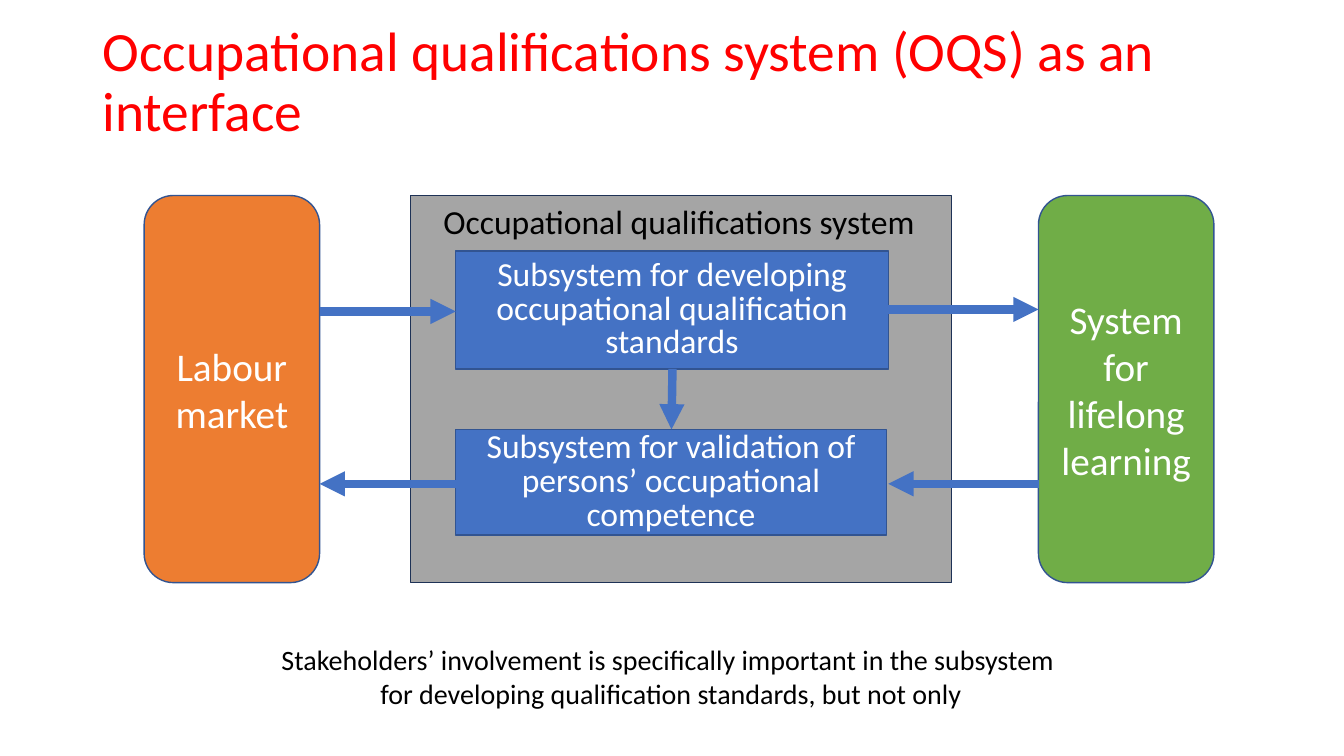
from lxml import etree
from pptx import Presentation
from pptx import util as u
from pptx.dml.color import RGBColor
from pptx.enum import shapes, text
from pptx.oxml import ns

# Content: lengths in px, 100 px to the inch
PX = 9144
FONT = "Calibri"
COLORS = {
    "red": "FF0000", "black": "000000", "white": "FFFFFF", "grey": "A5A5A5",
    "blue": "4472C4", "orange": "ED7D31", "green": "70AD47",
    "navy": "1E3256", "edge": "325491",
}
TOP, HEIGHT, SIDE_WIDTH = 194, 384, 174
LABOUR_LEFT, LEARNING_LEFT = 143, 1030
LABOUR_RIGHT = LABOUR_LEFT + SIDE_WIDTH
SUB_LEFT, SUB_RIGHT = 452, 881
UPPER_TOP, UPPER_BOTTOM, LOWER_TOP = 249, 366, 426
RETURN_Y = 480

# kind, (left, top, width, height), fill, edge, lines, size, line spacing
BOXES = [
    ("RECTANGLE", (407, TOP, 537, HEIGHT), "grey", "navy", [], 24, None),
    ("RECTANGLE", (SUB_LEFT, UPPER_TOP, SUB_RIGHT - SUB_LEFT, UPPER_BOTTOM - UPPER_TOP),
     "blue", "edge",
     ["Subsystem for developing occupational qualification standards"], 24, u.Pt(24)),
    ("RECTANGLE", (SUB_LEFT, LOWER_TOP, 427, 105), "blue", "edge",
     ["Subsystem for validation of persons’ occupational competence"], 24, u.Pt(24)),
    ("ROUNDED_RECTANGLE", (LABOUR_LEFT, TOP, SIDE_WIDTH, HEIGHT), "orange", "edge",
     ["Labour", "market"], 28, None),
    ("ROUNDED_RECTANGLE", (LEARNING_LEFT, TOP, SIDE_WIDTH, HEIGHT), "green", "edge",
     ["System", "for", "lifelong", "learning"], 28, None),
]

# Each arrow points at its second end
ARROWS = [
    ((LABOUR_RIGHT, 309), (SUB_LEFT, 309)),
    ((SUB_RIGHT, 307), (LEARNING_LEFT, 307)),
    ((SUB_LEFT, RETURN_Y), (LABOUR_RIGHT, RETURN_Y)),
    ((LEARNING_LEFT, RETURN_Y), (SUB_RIGHT, RETURN_Y)),
    ((667, UPPER_BOTTOM), (666, LOWER_TOP)),
]

# (left, top, width, height), lines, size, color, align, anchor, wrap, line spacing
LABELS = [
    ((92, 40, 1156, 85), ["Occupational qualifications system (OQS) as an interface"],
     39.6, "red", "LEFT", "MIDDLE", True, 0.9),
    ((430, TOP, 492, 50), ["Occupational qualifications system"],
     24, "black", "LEFT", "TOP", False, None),
    ((265, 633, 801, 77),
     ["Stakeholders’ involvement is specifically important in the subsystem ",
      "for developing qualification standards, but not only"],
     20, "black", "CENTER", "TOP", False, None),
]


def px(values):
    return [u.Emu(value * PX) for value in values]


def color(name):
    return RGBColor.from_string(COLORS[name])


def write(shape, lines, size, ink, align="CENTER", anchor="MIDDLE", wrap=True, spacing=None):
    frame = shape.text_frame
    frame.word_wrap = wrap
    frame.vertical_anchor = text.MSO_ANCHOR[anchor]
    for index, line in enumerate(lines):
        para = frame.add_paragraph() if index else frame.paragraphs[0]
        para.alignment = text.PP_ALIGN[align]
        para.line_spacing = spacing
        span = para.add_run()
        span.text = line
        span.font.name = FONT
        span.font.size = u.Pt(size)
        span.font.color.rgb = color(ink)


def add_box(page, kind, place, fill, edge, lines, size, spacing):
    box = page.shapes.add_shape(shapes.MSO_SHAPE[kind], *px(place))
    box.shadow.inherit = False
    box.fill.solid()
    box.fill.fore_color.rgb = color(fill)
    box.line.color.rgb = color(edge)
    box.line.width = u.Pt(1)
    write(box, lines, size, "white", spacing=spacing)


def add_arrow(page, start, end):
    arrow = page.shapes.add_connector(shapes.MSO_CONNECTOR.STRAIGHT, *px(start + end))
    arrow.line.color.rgb = color("blue")
    arrow.line.width = u.Pt(6)
    etree.SubElement(arrow.line._get_or_add_ln(), ns.qn("a:tailEnd"), type="triangle")
    etree.SubElement(arrow._element.spPr, ns.qn("a:effectLst"))


def main():
    deck = Presentation()
    deck.slide_width, deck.slide_height = px((1333, 750))
    page = deck.slides.add_slide(deck.slide_layouts[6])

    # Systems and subsystems
    for box in BOXES:
        add_box(page, *box)

    # Flows between them
    for start, end in ARROWS:
        add_arrow(page, start, end)

    # Title, heading and closing remark
    for place, *style in LABELS:
        write(page.shapes.add_textbox(*px(place)), *style)

    deck.save("out.pptx")


if __name__ == "__main__":
    main()
